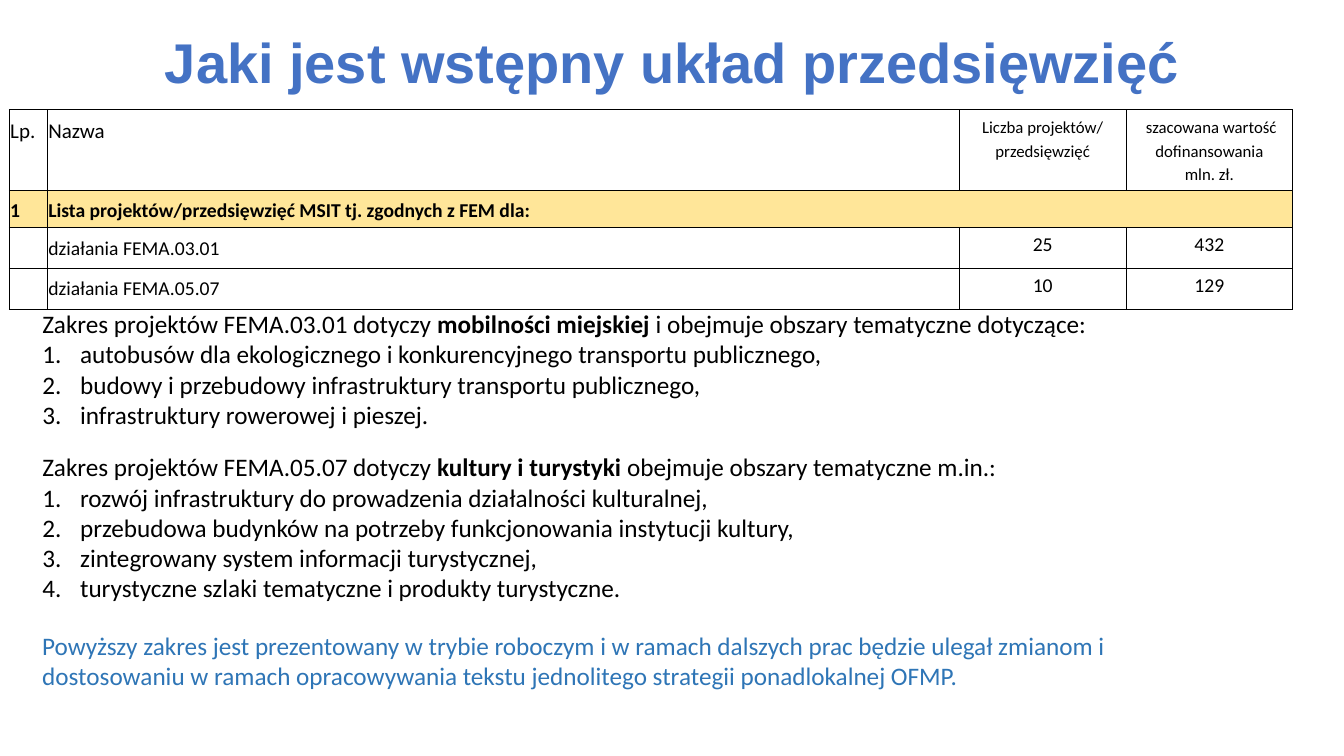
import pptx
import pptx.dml.color
import pptx.enum.text
import pptx.oxml
import pptx.oxml.ns
import pptx.util

Pt = pptx.util.Pt
ALIGN = pptx.enum.text.PP_ALIGN
HUES = {"title": "4472C4", "text": "000000", "note": "2E75B6", "band": "FFE699"}
SPACE = 'xmlns:a="http://schemas.openxmlformats.org/drawingml/2006/main"'


def write(par, text, size, hue="text", bold=False, name="Calibri"):
    run = par.add_run()
    run.text = text
    for key, val in {"size": Pt(size), "bold": bold, "name": name}.items():
        setattr(run.font, key, val)
    run.font.color.rgb = pptx.dml.color.RGBColor.from_string(HUES[hue])


def place(shape, left, top, width, height):
    spot = {"left": left, "top": top, "width": width, "height": height}
    for key, val in spot.items():
        setattr(shape, key, Pt(val))
    look = {"word_wrap": True, "auto_size": pptx.enum.text.MSO_AUTO_SIZE.NONE,
            "vertical_anchor": pptx.enum.text.MSO_ANCHOR.TOP,
            "margin_left": Pt(7.2), "margin_right": Pt(7.2),
            "margin_top": Pt(3.6), "margin_bottom": Pt(3.6)}
    for key, val in look.items():
        setattr(shape.text_frame, key, val)
    return shape.text_frame


deck = pptx.Presentation()
deck.slide_width, deck.slide_height = Pt(960), Pt(540)
slide = deck.slides.add_slide(deck.slide_layouts[3])
title, *lists = slide.placeholders

# Title
par = place(title, 66.2, 15.8, 827.3, 55.4).paragraphs[0]
par.alignment = ALIGN.CENTER
write(par, "Jaki jest wstępny układ przedsięwzięć", 40, "title", True, "Arial")

# Table: text size of each row, then its cells
rows = [
    (57.6, 15, ["Lp.", "Nazwa", "Liczba projektów/\nprzedsięwzięć",
                " szacowana wartość dofinansowania\nmln. zł."]),
    (26.6, 14, ["1", "Lista projektów/przedsięwzięć MSIT tj. zgodnych z FEM dla:", "", ""]),
    (29.2, 14, ["", "działania FEMA.03.01", "25", "432"]),
    (29.2, 14, ["", "działania FEMA.05.07", "10", "129"]),
]
wides = [27.2, 651.4, 119.3, 118.8]
high = sum(row[0] for row in rows)
grid = slide.shapes.add_table(4, 4, Pt(6.6), Pt(78.2), Pt(sum(wides)), Pt(high)).table
grid.first_row = grid.horz_banding = False
for col, wide in zip(grid.columns, wides):
    col.width = Pt(wide)
for r, (tall, size, texts) in enumerate(rows):
    grid.rows[r].height = Pt(tall)
    for c, text in enumerate(texts):
        cell = grid.cell(r, c)
        edge = {"margin_left": 0.7, "margin_right": 0.7,
                "margin_top": 3.6, "margin_bottom": 3.6}
        for key, val in edge.items():
            setattr(cell, key, Pt(val))
        if r == 1:
            cell.fill.solid()
            cell.fill.fore_color.rgb = pptx.dml.color.RGBColor.from_string(HUES["band"])
        else:
            cell.fill.background()
        for n, side in enumerate(["lnL", "lnR", "lnT", "lnB"]):
            line = pptx.oxml.parse_xml(
                f'<a:{side} {SPACE} w="{Pt(0.57)}"><a:solidFill>'
                f'<a:srgbClr val="{HUES["text"]}"/></a:solidFill></a:{side}>')
            cell._tc.get_or_add_tcPr().insert(n, line)
        for n, part in enumerate(text.split("\n") if text else []):
            par = cell.text_frame.add_paragraph() if n else cell.text_frame.paragraphs[0]
            if c > 1:
                par.alignment = ALIGN.CENTER
            if c < 2 or r == 0:
                par.line_spacing = 1.15
            write(par, part, 12 if r == 0 and c > 1 else size, bold=r == 1)
grid.cell(1, 1).merge(grid.cell(1, 3))

# Numbered lists, each under a lead line
topics = [
    (216.7, 93.6, ["Zakres projektów FEMA.03.01 dotyczy ", "mobilności miejskiej ",
                   "i obejmuje obszary tematyczne dotyczące:"],
     ["autobusów dla ekologicznego i konkurencyjnego transportu publicznego,",
      "budowy i przebudowy infrastruktury transportu publicznego,",
      "infrastruktury rowerowej i pieszej."]),
    (319, 115.2, ["Zakres projektów FEMA.05.07 dotyczy ", "kultury i turystyki ",
                  "obejmuje obszary tematyczne m.in.:"],
     ["rozwój infrastruktury do prowadzenia działalności kulturalnej,",
      "przebudowa budynków na potrzeby funkcjonowania instytucji kultury,",
      "zintegrowany system informacji turystycznej,",
      "turystyczne szlaki tematyczne i produkty turystyczne."]),
]
for body, (top, tall, lead, items) in zip(lists, topics):
    frame = place(body, 23, top, 870.5, tall)
    for n, parts in enumerate([lead] + [[item] for item in items]):
        par = frame.add_paragraph() if n else frame.paragraphs[0]
        par.space_before, par.line_spacing = Pt(0), 1.0
        props = par._p.get_or_add_pPr()
        props.set("marL", str(Pt(27 if n else 0)))
        props.set("indent", str(Pt(-27 if n else 0)))
        mark = '<a:buAutoNum %s type="arabicPeriod"/>' if n else "<a:buNone %s/>"
        props.append(pptx.oxml.parse_xml(mark % SPACE))
        for k, part in enumerate(parts):
            write(par, part, 18, bold=k == 1)

# Closing note
note = slide.shapes.add_textbox(0, 0, 0, 0)
par = place(note, 23, 446.4, 870.5, 50.4).paragraphs[0]
write(par, "Powyższy zakres jest prezentowany w trybie roboczym i w ramach dalszych prac "
      "będzie ulegał zmianom i dostosowaniu w ramach opracowywania tekstu jednolitego "
      "strategii ponadlokalnej OFMP.", 18, "note")

deck.save("out.pptx")
